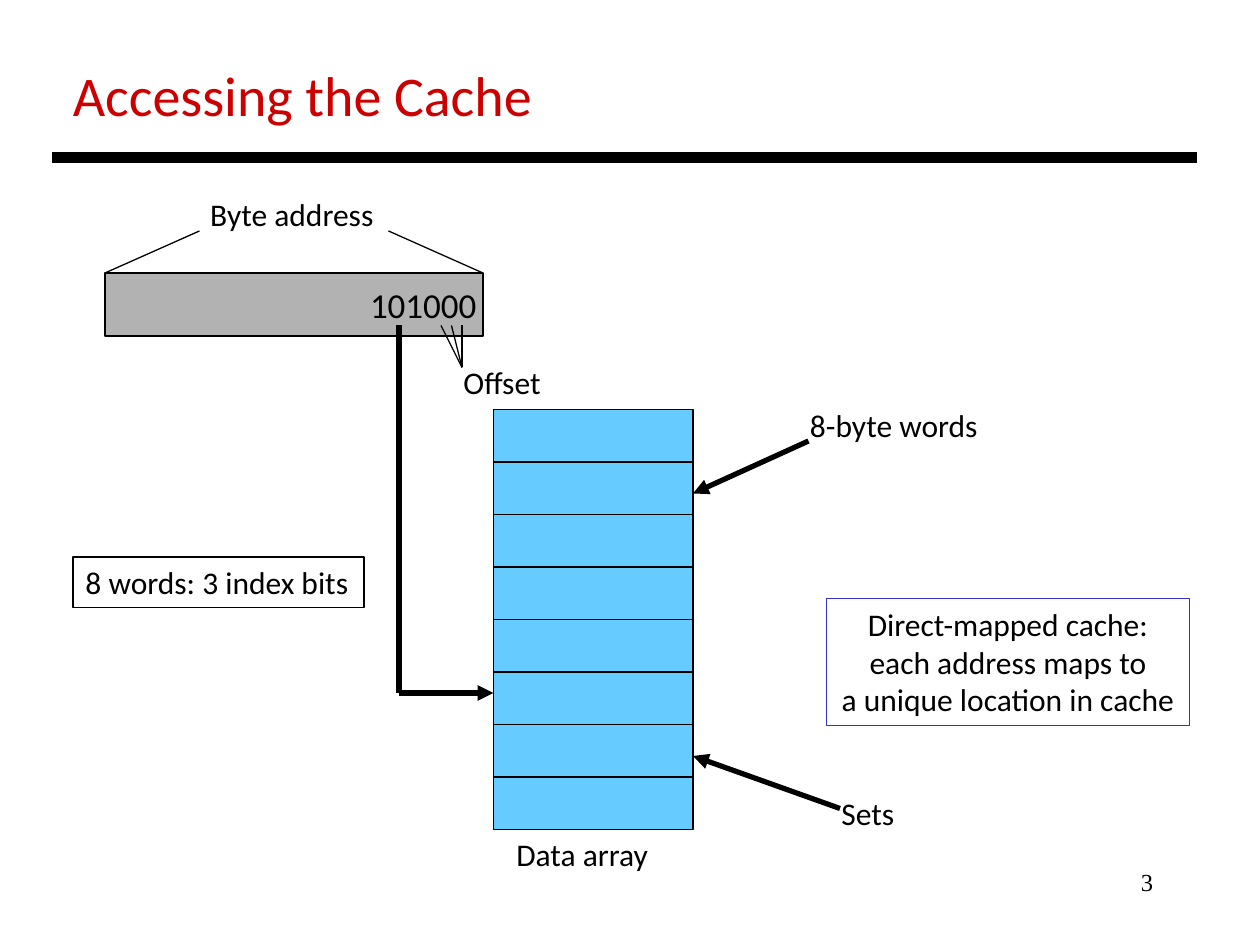
from lxml import etree
from pptx import Presentation
from pptx.dml.color import RGBColor
from pptx.enum import shapes, text
from pptx.oxml.ns import qn
from pptx.util import Inches, Pt

UNIT = 1 / 12  # the drawing sits on a grid of twelfths of an inch
LEFT, CENTER, RIGHT = text.PP_ALIGN.LEFT, text.PP_ALIGN.CENTER, text.PP_ALIGN.RIGHT

# text, left, top, width, height in inches
TITLE = ("Accessing the Cache", 0.48, 0.43, 3.88, 0.64)
PAGE_NUMBER = ("3", 7.17, 6.83, 2.08, 0.5)
LABELS = [
    ("Byte address", 1.57, 1.5, 1.51, 0.4),
    ("Offset", 3.58, 2.83, 0.82, 0.4),
    ("8-byte words", 6.33, 3.17, 1.55, 0.4),
    ("Sets", 6.58, 6.25, 0.62, 0.4),
    ("Data array", 4, 6.58, 1.26, 0.4),
]
INDEX_NOTE = ("8 words: 3 index bits", 0.58, 4.42, 2.31, 0.4)
MAPPING_NOTE = ("Direct-mapped cache:\neach address maps to\na unique location in cache",
                6.56, 4.75, 2.88, 1.01)

# left, top, width, height in grid units
ADDRESS = (10, 26, 36, 6)
FIRST_SET = (47, 39, 19, 5)
SET_COUNT = 8

# x1, y1, x2, y2 in grid units
TITLE_RULE = (5, 15, 114, 15)
OFFSET_TIP = (44, 35)
THIN_LINES = [(19, 22, 10, 26), (37, 22, 46, 26)] + [
    (x, 31, *OFFSET_TIP) for x in (42, 43, 44)]
INDEX_STEM = (38, 31, 38, 66)
ARROWS = [(38, 66, 47, 66), (77, 42, 66, 47), (80, 77, 66, 72)]

prs = Presentation()
prs.slide_width, prs.slide_height = Inches(10), Inches(7.5)
slide = prs.slides.add_slide(prs.slide_layouts[6])


def color(value):
    return RGBColor.from_string(value)


def grid(values):
    return [Inches(v * UNIT) for v in values]


def write(tf, content, size=18, font="Calibri", ink="000000", align=LEFT):
    tf.text = content
    for p in tf.paragraphs:
        p.alignment = align
        for r in p.runs:
            r.font.size, r.font.name = Pt(size), font
            r.font.color.rgb = color(ink)


def add_text(item, border=None, wrap=False, **style):
    content, *place = item
    sp = slide.shapes.add_textbox(*map(Inches, place))
    sp.text_frame.word_wrap = wrap
    write(sp.text_frame, content, **style)
    if border:
        sp.line.color.rgb = color(border)
        sp.line.width = Pt(0.75)


def add_box(place, fill):
    sp = slide.shapes.add_shape(shapes.MSO_SHAPE.RECTANGLE, *grid(place))
    sp.shadow.inherit = False
    sp.fill.solid()
    sp.fill.fore_color.rgb = color(fill)
    sp.line.color.rgb = color("000000")
    sp.line.width = Pt(0.75)
    return sp


def add_line(ends, width, arrow=False):
    line = slide.shapes.add_connector(shapes.MSO_CONNECTOR.STRAIGHT, *grid(ends))
    line.line.color.rgb = color("000000")
    line.line.width = Pt(width)
    if arrow:
        etree.SubElement(line.line._get_or_add_ln(), qn("a:tailEnd"), type="triangle")
    etree.SubElement(line._element.spPr, qn("a:effectLst"))


add_text(PAGE_NUMBER, wrap=True, size=14, font="Times New Roman", align=RIGHT)
add_text(TITLE, size=32, ink="CC0000")
add_line(TITLE_RULE, 6)

left, top, width, height = FIRST_SET
for i in range(SET_COUNT):
    add_box((left, top + i * height, width, height), "66CCFF")

address = add_box(ADDRESS, "B2B2B2")
address.text_frame.margin_right = Inches(0.05)
address.text_frame.vertical_anchor = text.MSO_ANCHOR.MIDDLE
write(address.text_frame, "101000", size=20, align=RIGHT)

for ends in THIN_LINES:
    add_line(ends, 0.75)
add_line(INDEX_STEM, 3)
for ends in ARROWS:
    add_line(ends, 3, arrow=True)

for label in LABELS:
    add_text(label)
add_text(INDEX_NOTE, border="000000")
add_text(MAPPING_NOTE, border="3333CC", align=CENTER)

prs.save("out.pptx")
